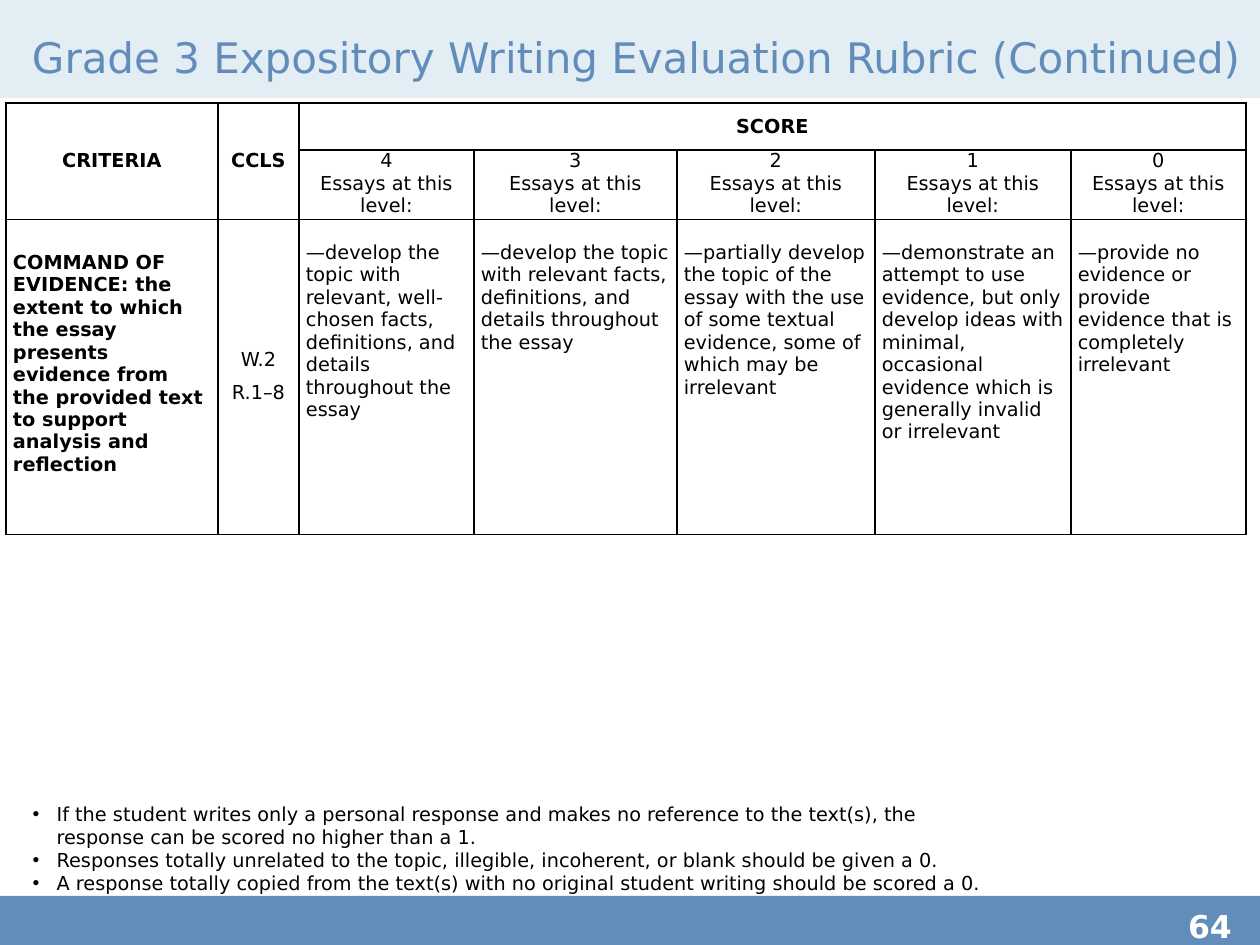
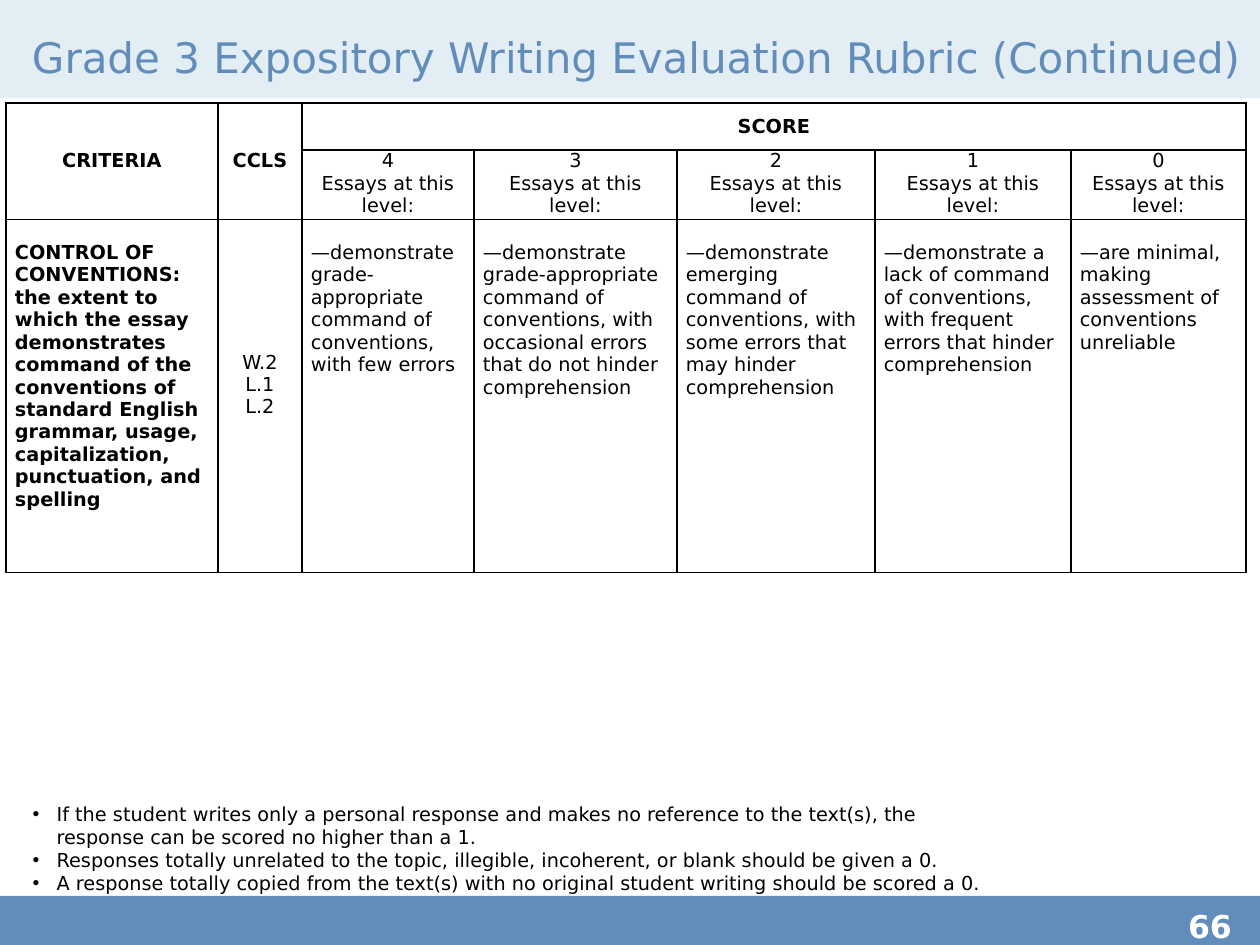
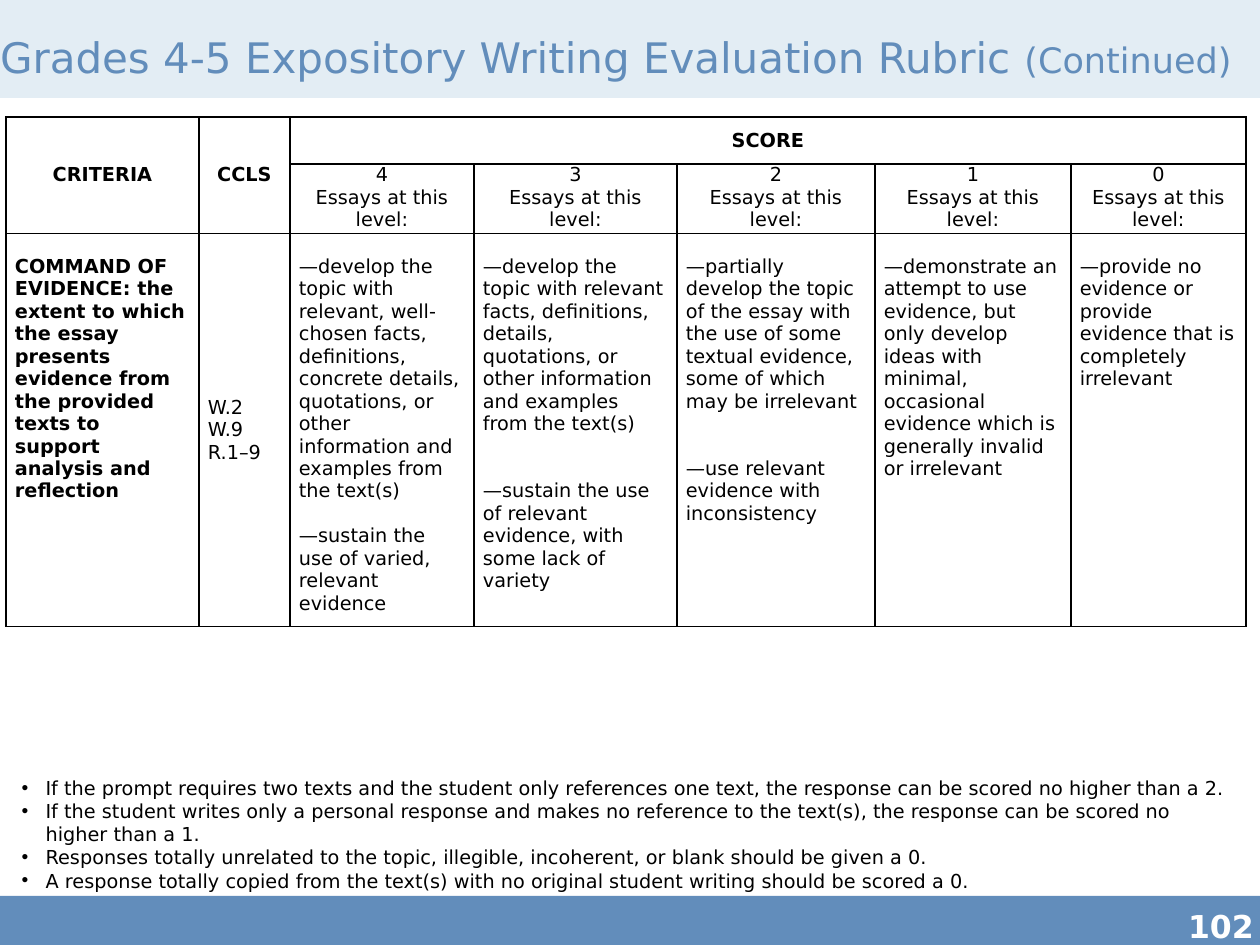
"""Build three slides of an expository writing evaluation rubric."""
from dataclasses import dataclass

from lxml import etree
from pptx import Presentation
from pptx import util as u
from pptx.dml.color import RGBColor
from pptx.enum import shapes, text
from pptx.oxml import ns

SCALE = 914400 / 126
SLIDE_WIDTH, SLIDE_HEIGHT = 1260, 945
LEVEL_WIDTHS = [203, 198, 196, 175]
HEADER_HEIGHTS = [47, 69]
LINE_HEIGHT = 22
CENTER = text.PP_ALIGN.CENTER
LEFT = text.PP_ALIGN.LEFT
MIDDLE = text.MSO_ANCHOR.MIDDLE
TOP = text.MSO_ANCHOR.TOP


@dataclass(frozen=True)
class Theme:
    """Colours, font and type sizes shared by the slides."""
    font: str = "DejaVu Sans"
    blue: str = "628DBB"
    pale: str = "E3EDF4"
    white: str = "FFFFFF"
    black: str = "000000"
    title: int = 24
    title_small: int = 20
    number: int = 18
    body: int = 11


THEME = Theme()


@dataclass
class Rubric:
    """Content and measures of one rubric slide."""
    title: list
    title_area: tuple
    number: str
    table_top: int
    first_widths: list
    body_height: int
    criterion: str
    codes: list
    levels: list
    rules: list
    rules_area: tuple
    inset: int = 9
    criterion_top: int = LINE_HEIGHT
    codes_bottom: int = 0
    codes_align: int = CENTER
    codes_gap: int = 0
    level_gaps: tuple = (0, 0, 0, 0, 0)


SCORING_RULES = [
    "If the student writes only a personal response and makes no reference to the text(s), "
    "the response can be scored no higher than a 1.",
    "Responses totally unrelated to the topic, illegible, incoherent, or blank should be given a 0.",
    "A response totally copied from the text(s) with no original student writing should be scored a 0.",
]
TWO_TEXTS_RULE = ("If the prompt requires two texts and the student only references one text, "
                  "the response can be scored no higher than a 2.")
PARTIAL = ("—partially develop the topic of the essay with the use of some textual evidence, "
           "some of which may be irrelevant")
ATTEMPT = ("—demonstrate an attempt to use evidence, but only develop ideas with minimal, "
           "occasional evidence which is generally invalid or irrelevant")
NO_EVIDENCE = "—provide no evidence or provide evidence that is completely irrelevant"
GRADE_3_TITLE = [("Grade 3 Expository Writing Evaluation Rubric (Continued)", THEME.title)]

RUBRICS = [
    Rubric(
        title=GRADE_3_TITLE,
        title_area=(32, 29, 1245, 62),
        number="64",
        table_top=103,
        first_widths=[212, 81, 175],
        body_height=315,
        criterion="COMMAND OF EVIDENCE: the extent to which the essay presents evidence "
                  "from the provided text to support analysis and reflection",
        codes=["W.2", "R.1–8"],
        levels=[
            ["—develop the topic with relevant, well-chosen facts, definitions, "
             "and details throughout the essay"],
            ["—develop the topic with relevant facts, definitions, and details throughout the essay"],
            [PARTIAL],
            [ATTEMPT],
            [NO_EVIDENCE],
        ],
        rules=SCORING_RULES,
        rules_area=(20, 796, 1000, 106),
        inset=7,
        criterion_top=LINE_HEIGHT + 10,
        codes_gap=6,
    ),
    Rubric(
        title=GRADE_3_TITLE,
        title_area=(32, 29, 1240, 62),
        number="66",
        table_top=103,
        first_widths=[212, 84, 172],
        body_height=353,
        criterion="CONTROL OF CONVENTIONS: the extent to which the essay demonstrates command "
                  "of the conventions of standard English grammar, usage, capitalization, "
                  "punctuation, and spelling",
        codes=["W.2", "L.1", "L.2"],
        levels=[
            ["—demonstrate grade-appropriate command of conventions, with few errors"],
            ["—demonstrate grade-appropriate command of conventions, "
             "with occasional errors that do not hinder comprehension"],
            ["—demonstrate emerging command of conventions, "
             "with some errors that may hinder comprehension"],
            ["—demonstrate a lack of command of conventions, "
             "with frequent errors that hinder comprehension"],
            ["—are minimal, making assessment of conventions unreliable"],
        ],
        rules=SCORING_RULES,
        rules_area=(20, 796, 1000, 106),
        codes_bottom=LINE_HEIGHT,
    ),
    Rubric(
        title=[("Grades 4-5 Expository Writing Evaluation Rubric ", THEME.title),
               ("(Continued)", THEME.title_small)],
        title_area=(0, 29, 1260, 62),
        number="102",
        table_top=117,
        first_widths=[193, 91, 184],
        body_height=393,
        criterion="COMMAND OF EVIDENCE: the extent to which the essay presents evidence "
                  "from the provided texts to support analysis and reflection",
        codes=["W.2", "W.9", "R.1–9"],
        levels=[
            ["—develop the topic with relevant, well-chosen facts, definitions, concrete details, "
             "quotations, or other information and examples from the text(s)",
             "—sustain the use of varied, relevant evidence"],
            ["—develop the topic with relevant facts, definitions, details, quotations, "
             "or other information and examples from the text(s)",
             "—sustain the use of relevant evidence, with some lack of variety"],
            [PARTIAL, "—use relevant evidence with inconsistency"],
            [ATTEMPT],
            [NO_EVIDENCE],
        ],
        rules=[TWO_TEXTS_RULE] + SCORING_RULES,
        rules_area=(9, 770, 1240, 130),
        codes_align=LEFT,
        level_gaps=(12.8, 25.6, 25.6, 0, 0),
    ),
]


def px(length):
    """Turn pixels into EMU."""
    return u.Emu(round(length * SCALE))


def place(box, area):
    """Set the position and size of a box."""
    box.left, box.top, box.width, box.height = map(px, area)


def add_span(para, words, size, color=THEME.black, bold=False):
    """Add one formatted run to a paragraph."""
    span = para.add_run()
    span.text = words
    span.font.name = THEME.font
    span.font.size = u.Pt(size)
    span.font.bold = bold
    span.font.color.rgb = RGBColor.from_string(color)


def fill_frame(frame, lines, bold=False, align=LEFT, gap=0):
    """Write body lines as paragraphs with a gap between them."""
    for index, line in enumerate(lines):
        para = frame.paragraphs[0] if index == 0 else frame.add_paragraph()
        para.alignment = align
        para.space_before = u.Pt(gap if index else 0)
        add_span(para, line, THEME.body, bold=bold)


def add_bands(slide):
    """Put the header and footer bands behind everything on the layout."""
    layout_tree = slide.slide_layout.shapes.element
    bands = [(0, 896, SLIDE_WIDTH, 49, THEME.blue),
             (0, 0, SLIDE_WIDTH, 165, THEME.pale),
             (0, 98, SLIDE_WIDTH, 108, THEME.white)]
    for position, (left, top, width, height, color) in enumerate(bands, start=2):
        band = slide.shapes.add_shape(shapes.MSO_SHAPE.RECTANGLE,
                                      px(left), px(top), px(width), px(height))
        band.shadow.inherit = False
        band.fill.solid()
        band.fill.fore_color.rgb = RGBColor.from_string(color)
        band.line.fill.background()
        layout_tree.insert(position, band.element)


def set_title(slide, spans, area):
    """Write the title placeholder."""
    title = slide.shapes.title
    place(title, area)
    frame = title.text_frame
    frame.auto_size = text.MSO_AUTO_SIZE.NONE
    frame.word_wrap = True
    frame.vertical_anchor = MIDDLE
    frame.margin_left = frame.margin_top = 0
    frame.margin_right, frame.margin_bottom = px(13), px(6)
    frame.paragraphs[0].alignment = LEFT
    for words, size in spans:
        add_span(frame.paragraphs[0], words, size, THEME.blue)


def add_page_number(slide, number):
    """Write the page number on the footer band."""
    box = slide.shapes.add_textbox(px(1188), px(907), px(72), px(38))
    frame = box.text_frame
    frame.word_wrap = True
    frame.margin_left = frame.margin_top = frame.margin_right = frame.margin_bottom = 0
    add_span(frame.paragraphs[0], number, THEME.number, THEME.white, bold=True)


def set_rules(slide, lines, area):
    """Write the scoring rules as bullets in the body placeholder."""
    body = slide.placeholders[1]
    place(body, area)
    frame = body.text_frame
    frame.auto_size = text.MSO_AUTO_SIZE.NONE
    frame.word_wrap = True
    frame.vertical_anchor = TOP
    fill_frame(frame, lines)
    for para in frame.paragraphs:
        properties = para._p.get_or_add_pPr()
        properties.set("marL", str(px(24)))
        properties.set("indent", str(px(-24)))
        etree.SubElement(properties, ns.qn("a:buChar")).set("char", "•")


def style_cell(cell):
    """Give a cell thin black borders and no fill."""
    properties = cell._tc.get_or_add_tcPr()
    for side in ("lnL", "lnR", "lnT", "lnB"):
        line = etree.SubElement(properties, ns.qn(f"a:{side}"), w=str(u.Pt(1)))
        solid = etree.SubElement(line, ns.qn("a:solidFill"))
        etree.SubElement(solid, ns.qn("a:srgbClr"), val=THEME.black)
    cell.fill.background()


def write_cell(cell, lines, inset=7, top=0, bottom=0, anchor=TOP, **style):
    """Set a cell's margins and write its lines."""
    cell.margin_left = cell.margin_right = px(inset)
    cell.margin_top, cell.margin_bottom = px(top), px(bottom)
    cell.vertical_anchor = anchor
    fill_frame(cell.text_frame, lines, **style)


def write_header(table):
    """Merge and write the two header rows."""
    table.cell(0, 0).merge(table.cell(1, 0))
    table.cell(0, 1).merge(table.cell(1, 1))
    table.cell(0, 2).merge(table.cell(0, 6))
    for column, label in enumerate(["CRITERIA", "CCLS", "SCORE"]):
        write_cell(table.cell(0, column), [label], anchor=MIDDLE, bold=True, align=CENTER)
    for column, score in enumerate("43210", start=2):
        write_cell(table.cell(1, column), [score, "Essays at this level:"], align=CENTER)


def add_rubric_table(slide, rubric):
    """Add the table of criteria, standards and score levels."""
    widths = rubric.first_widths + LEVEL_WIDTHS
    heights = HEADER_HEIGHTS + [rubric.body_height]
    table = slide.shapes.add_table(len(heights), len(widths), px(6), px(rubric.table_top),
                                   px(sum(widths)), px(sum(heights))).table
    table.first_row = table.horz_banding = False
    for column, width in zip(table.columns, widths):
        column.width = px(width)
    for row, height in zip(table.rows, heights):
        row.height = px(height)
    for cell in table.iter_cells():
        style_cell(cell)
    write_header(table)
    write_cell(table.cell(2, 0), [rubric.criterion], rubric.inset, rubric.criterion_top, bold=True)
    write_cell(table.cell(2, 1), rubric.codes, rubric.inset, bottom=rubric.codes_bottom,
               anchor=MIDDLE, align=rubric.codes_align, gap=rubric.codes_gap)
    for column, (lines, gap) in enumerate(zip(rubric.levels, rubric.level_gaps), start=2):
        write_cell(table.cell(2, column), lines, rubric.inset, LINE_HEIGHT, gap=gap)


def main():
    """Build and save the deck."""
    deck = Presentation()
    deck.slide_width, deck.slide_height = px(SLIDE_WIDTH), px(SLIDE_HEIGHT)
    layout = deck.slide_layouts[1]
    for index, rubric in enumerate(RUBRICS):
        page = deck.slides.add_slide(layout)
        if index == 0:
            add_bands(page)
        set_title(page, rubric.title, rubric.title_area)
        add_page_number(page, rubric.number)
        add_rubric_table(page, rubric)
        set_rules(page, rubric.rules, rubric.rules_area)
    deck.save("out.pptx")


if __name__ == "__main__":
    main()
